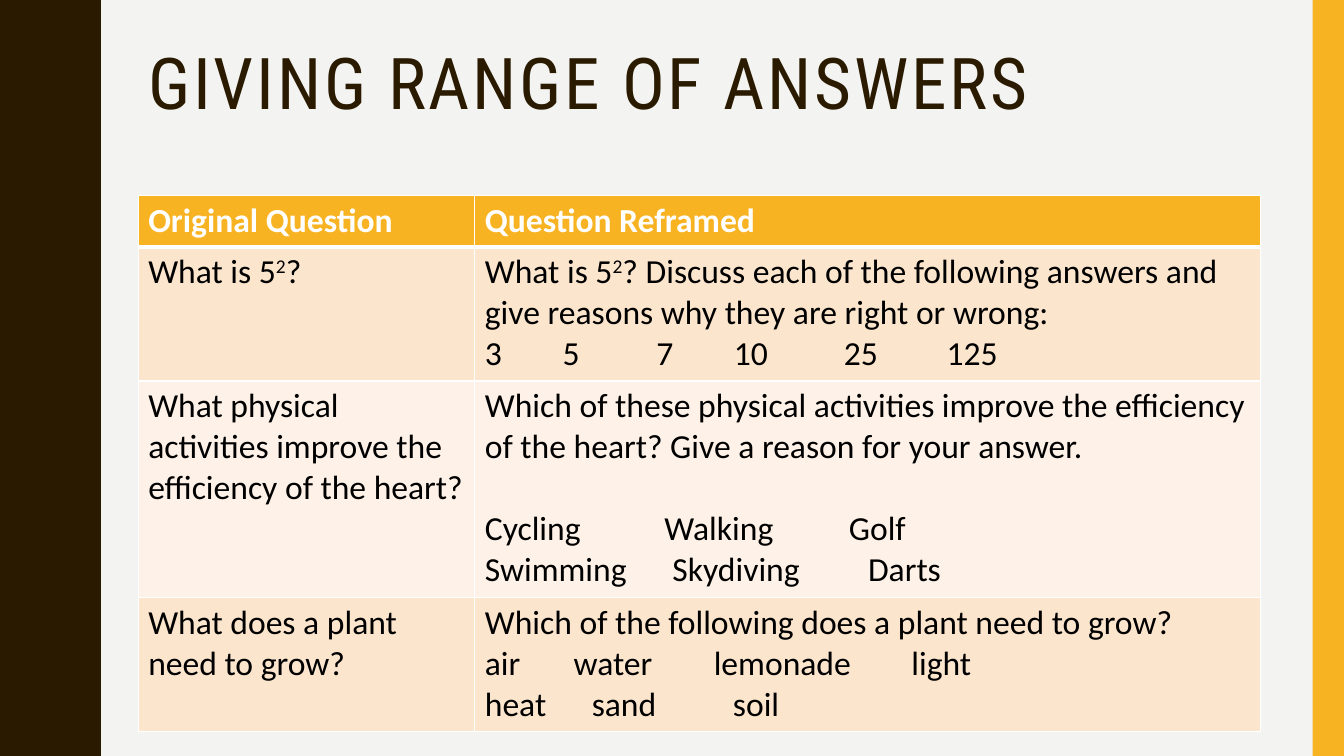
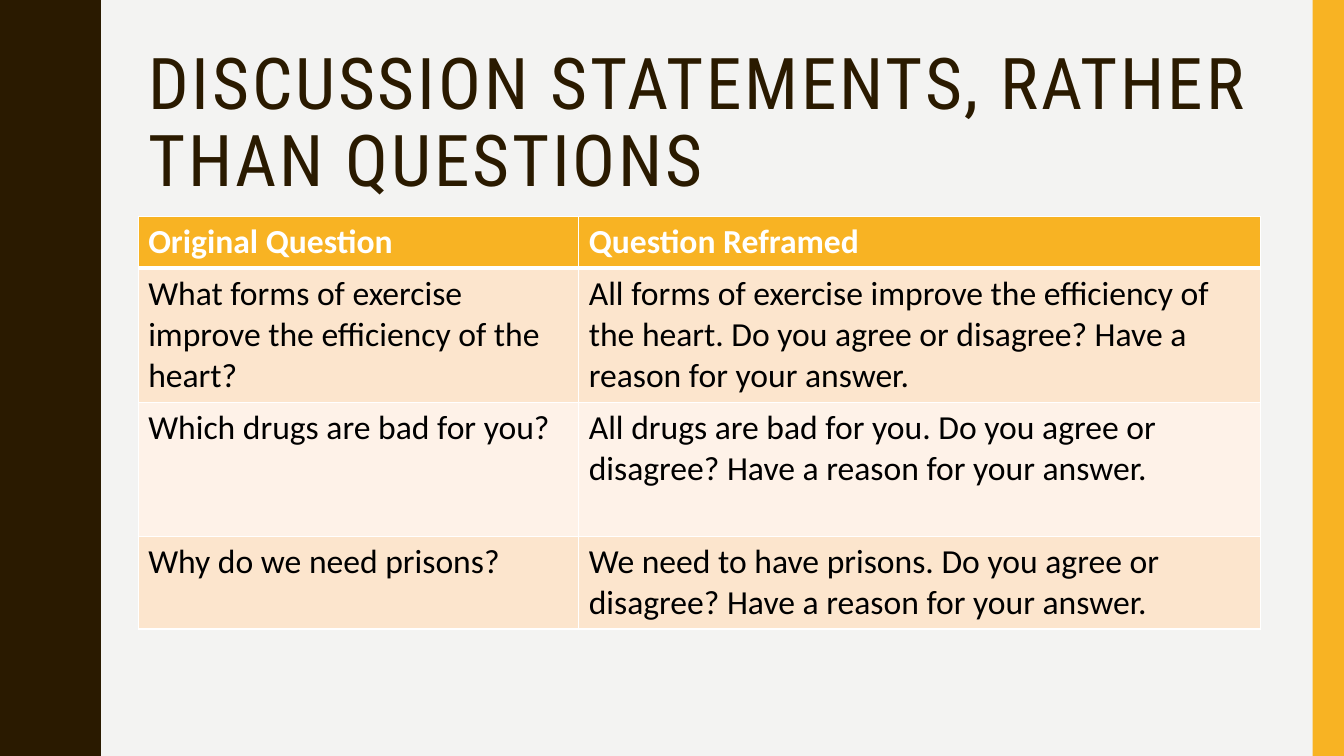
"""Build two slides of reframed classroom questions."""
from dataclasses import dataclass
from math import cos, pi
from typing import Any

from lxml import etree
from pptx import Presentation, util as u
from pptx.dml import color
from pptx.enum import shapes, text
from pptx.oxml import ns

WIDE, HIGH = 13.33, 7.5
DARK, GOLD, PALE, WHITE, BLACK = "2A1A00", "F8B323", "F3F3F2", "FFFFFF", "000000"
BANDS = ("FCE5CD", "FEF2E8")
HEAD, BODY = "Roboto Condensed", "Calibri"
LEFT, SPAN = 10.28, 83.5
LINE, PAD = 0.41, 0.1


@dataclass(frozen=True)
class Line:
    """One paragraph; carets enclose a superscript."""
    words: str
    tabs: tuple[float, ...] = ()
    gap: float = 0


@dataclass(frozen=True)
class Row:
    """One table row, tall enough for a number of lines."""
    ask: str
    lines: tuple[Line, ...]
    tall: int


@dataclass(frozen=True)
class Page:
    """One slide: title, table top and first column as percentages."""
    title: str
    top: float
    first: float
    rows: tuple[Row, ...]


def across(share: float) -> int:
    """Turn a percentage of the slide's width into a length."""
    return u.Inches(WIDE * share / 100)


def down(share: float) -> int:
    """Turn a percentage of the slide's height into a length."""
    return u.Inches(HIGH * share / 100)


def paint(fill: Any, tint: str) -> None:
    """Fill solidly with a hex colour."""
    fill.solid()
    fill.fore_color.rgb = color.RGBColor.from_string(tint)


def write(frame: Any, lines: tuple[Line, ...], *, size: float = 24, font: str = BODY,
          tint: str = BLACK, bold: bool = False, space: float = 0,
          lead: float = 1.0) -> None:
    """Write left-aligned paragraphs with one format."""
    frame.word_wrap = True
    for i, line in enumerate(lines):
        para = frame.add_paragraph() if i else frame.paragraphs[0]
        para.alignment = text.PP_ALIGN.LEFT
        para.line_spacing = lead
        if line.gap:
            para.space_before = u.Pt(line.gap)
        if line.tabs:
            stops = etree.SubElement(para._p.get_or_add_pPr(), ns.qn("a:tabLst"))
            for stop in line.tabs:
                etree.SubElement(stops, ns.qn("a:tab"), pos=str(u.Inches(stop)), algn="l")
        for j, part in enumerate(line.words.split("^")):
            run = para.add_run()
            run.text = part
            run.font.size, run.font.name, run.font.bold = u.Pt(size), font, bold
            run.font.color.rgb = color.RGBColor.from_string(tint)
            props = run._r.get_or_add_rPr()
            if space:
                props.set("spc", str(int(space * 100)))
            if j % 2:
                props.set("baseline", "30000")


def border(cell: Any, above: float, below: float) -> None:
    """Draw white borders around a cell."""
    props = cell._tc.get_or_add_tcPr()
    for i, (side, width) in enumerate(zip("LRTB", (1, 1, above, below))):
        edge = etree.Element(ns.qn(f"a:ln{side}"), w=str(u.Pt(width)))
        fill = etree.SubElement(edge, ns.qn("a:solidFill"))
        etree.SubElement(fill, ns.qn("a:srgbClr"), val=WHITE)
        props.insert(i, edge)


def dress(deck: Any, layout: Any, slide: Any) -> None:
    """Set the background, side bands and title place in the layout."""
    paint(deck.slide_master.background.fill, PALE)
    steps = 140
    points = []
    for i in range(steps + 1):
        y = HIGH * i / steps
        turn = 2 * pi * y / (HIGH / 5)
        points.append((0.875 - 0.095 * (1.08 * cos(turn) - 0.08 * cos(3 * turn)), y))
    pen = slide.shapes.build_freeform(0, 0, scale=u.Inches(1))
    pen.add_line_segments(points + [(0, HIGH)], close=True)
    wave = pen.convert_to_shape()
    strip = slide.shapes.add_shape(shapes.MSO_SHAPE.RECTANGLE, across(97.67), 0,
                                   across(2.33), down(100))
    for band, tint in ((wave, DARK), (strip, GOLD)):
        paint(band.fill, tint)
        band.line.fill.background()
        band.shadow.inherit = False
        layout.shapes.element.append(band.element)
    title = layout.placeholders[0]
    title.left, title.top = across(LEFT), down(5.6)
    title.width, title.height = across(SPAN), down(21.73)


def grid(slide: Any, page: Page) -> None:
    """Draw the table of questions."""
    rows = (Row("Original Question", (Line("Question Reframed"),), 1),) + page.rows
    talls = [u.Inches(row.tall * LINE + PAD) for row in rows]
    table = slide.shapes.add_table(len(rows), 2, across(LEFT), down(page.top),
                                   across(SPAN), sum(talls)).table
    for col, share in zip(table.columns, (page.first, 100 - page.first)):
        col.width = across(SPAN * share / 100)
    for i, row in enumerate(rows):
        table.rows[i].height = talls[i]
        for cell, lines in zip(table.rows[i].cells, ((Line(row.ask),), row.lines)):
            paint(cell.fill, BANDS[(i - 1) % 2] if i else GOLD)
            border(cell, 3 if i == 1 else 1, 1 if i else 3)
            write(cell.text_frame, lines, tint=BLACK if i else WHITE, bold=not i)


def draw(slide: Any, page: Page) -> None:
    """Fill one slide."""
    frame = slide.shapes.title.text_frame
    frame.auto_size = text.MSO_AUTO_SIZE.NONE
    frame.vertical_anchor = text.MSO_ANCHOR.TOP
    write(frame, (Line(page.title),), size=51, font=HEAD, tint=DARK, space=2, lead=0.9)
    grid(slide, page)


PAGES = (
    Page("GIVING RANGE OF ANSWERS", 25.87, 30, (
        Row("What is 5^2^?", (
            Line("What is 5^2^? Discuss each of the following answers and "
                 "give reasons why they are right or wrong:"),
            Line("3\t5\t7\t10\t25\t125", (0.77, 1.7, 2.47, 3.56, 4.58))), 3),
        Row("What physical activities improve the efficiency of the heart?", (
            Line("Which of these physical activities improve the efficiency "
                 "of the heart? Give a reason for your answer."),
            Line("Cycling\tWalking\tGolf", (1.78, 3.61), 29),
            Line("Swimming\tSkydiving\tDarts", (1.86, 3.8))), 5),
        Row("What does a plant need to grow?", (
            Line("Which of the following does a plant need to grow?"),
            Line("air\twater\tlemonade\tlight", (0.88, 2.27, 4.23)),
            Line("heat\tsand\tsoil", (1.06, 2.46))), 3))),
    Page("DISCUSSION STATEMENTS, RATHER THAN QUESTIONS", 28.67, 39.26, (
        Row("What forms of exercise improve the efficiency of the heart?", (
            Line("All forms of exercise improve the efficiency of the heart. "
                 "Do you agree or disagree? Have a reason for your answer."),), 3),
        Row("Which drugs are bad for you?", (
            Line("All drugs are bad for you. Do you agree or disagree? "
                 "Have a reason for your answer."),), 3),
        Row("Why do we need prisons?", (
            Line("We need to have prisons. Do you agree or disagree? "
                 "Have a reason for your answer."),), 2))),
)


def main() -> None:
    """Build and save the deck."""
    deck = Presentation()
    deck.slide_width, deck.slide_height = across(100), down(100)
    layout = deck.slide_layouts.get_by_name("Title Only")
    for i, page in enumerate(PAGES):
        slide = deck.slides.add_slide(layout)
        if not i:
            dress(deck, layout, slide)
        draw(slide, page)
    deck.save("out.pptx")


if __name__ == "__main__":
    main()
